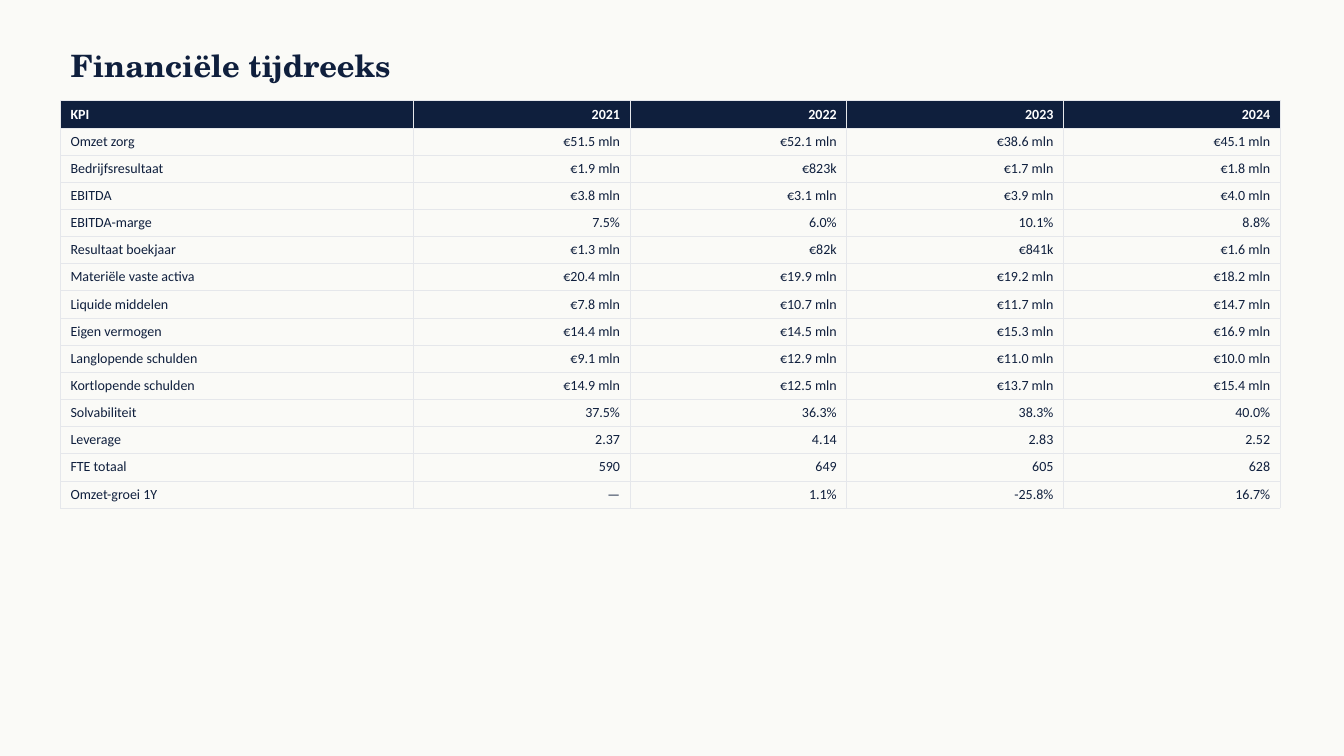
"""Build the slide with the financial time series table."""
from lxml import etree
from pptx import Presentation
from pptx.dml.color import RGBColor
from pptx.enum.text import MSO_ANCHOR, PP_ALIGN
from pptx.oxml.ns import qn
from pptx.util import Pt

LEFT, RIGHT = PP_ALIGN.LEFT, PP_ALIGN.RIGHT
MIDDLE = MSO_ANCHOR.MIDDLE
NAVY = RGBColor(0x0F, 0x1F, 0x3D)
WHITE = RGBColor(0xFF, 0xFF, 0xFF)
PAPER = RGBColor(0xFA, 0xFA, 0xF7)
RULE = RGBColor(0xE5, 0xE7, 0xEB)

TITLE = "Financiële tijdreeks"
ROWS = [
    ("KPI", "2021", "2022", "2023", "2024"),
    ("Omzet zorg", "€51.5 mln", "€52.1 mln", "€38.6 mln", "€45.1 mln"),
    ("Bedrijfsresultaat", "€1.9 mln", "€823k", "€1.7 mln", "€1.8 mln"),
    ("EBITDA", "€3.8 mln", "€3.1 mln", "€3.9 mln", "€4.0 mln"),
    ("EBITDA-marge", "7.5%", "6.0%", "10.1%", "8.8%"),
    ("Resultaat boekjaar", "€1.3 mln", "€82k", "€841k", "€1.6 mln"),
    ("Materiële vaste activa", "€20.4 mln", "€19.9 mln", "€19.2 mln", "€18.2 mln"),
    ("Liquide middelen", "€7.8 mln", "€10.7 mln", "€11.7 mln", "€14.7 mln"),
    ("Eigen vermogen", "€14.4 mln", "€14.5 mln", "€15.3 mln", "€16.9 mln"),
    ("Langlopende schulden", "€9.1 mln", "€12.9 mln", "€11.0 mln", "€10.0 mln"),
    ("Kortlopende schulden", "€14.9 mln", "€12.5 mln", "€13.7 mln", "€15.4 mln"),
    ("Solvabiliteit", "37.5%", "36.3%", "38.3%", "40.0%"),
    ("Leverage", "2.37", "4.14", "2.83", "2.52"),
    ("FTE totaal", "590", "649", "605", "628"),
    ("Omzet-groei 1Y", "—", "1.1%", "-25.8%", "16.7%"),
]
WIDTHS = [252] + [154.8] * 4
ROW_H = 19.4
MARGIN = 43.2


def set_font(para, name, size, color, bold):
    font = para.font
    font.name, font.size, font.bold = name, Pt(size), bold
    font.color.rgb = color


def add_border(cell):
    props = cell._tc.get_or_add_tcPr()
    for side in ("lnL", "lnR", "lnT", "lnB"):
        line = etree.SubElement(props, qn(f"a:{side}"), w=str(Pt(0.5)))
        fill = etree.SubElement(line, qn("a:solidFill"))
        etree.SubElement(fill, qn("a:srgbClr"), val=str(RULE))


def add_title(slide):
    title = slide.shapes.title
    title.left, title.top = Pt(MARGIN), Pt(28.8)
    title.width, title.height = Pt(864), Pt(36)
    frame = title.text_frame
    frame.text = TITLE
    frame.vertical_anchor = MIDDLE
    para = frame.paragraphs[0]
    para.alignment = LEFT
    set_font(para, "TeX Gyre Schola", 22, NAVY, True)


def add_grid(slide):
    table = slide.shapes.add_table(
        len(ROWS), len(WIDTHS), Pt(MARGIN), Pt(72),
        Pt(sum(WIDTHS)), Pt(ROW_H * len(ROWS))).table
    table.horz_banding = False
    for col, width in zip(table.columns, WIDTHS):
        col.width = Pt(width)
    for r, values in enumerate(ROWS):
        table.rows[r].height = Pt(ROW_H)
        head = r == 0
        for c, value in enumerate(values):
            cell = table.cell(r, c)
            cell.text = value
            add_border(cell)
            if head:
                cell.fill.solid()
                cell.fill.fore_color.rgb = NAVY
            else:
                cell.fill.background()
            para = cell.text_frame.paragraphs[0]
            para.alignment = RIGHT if c else LEFT
            set_font(para, "Calibri", 10, WHITE if head else NAVY, head)


def main():
    deck = Presentation()
    deck.slide_width, deck.slide_height = Pt(960), Pt(540)
    slide = deck.slides.add_slide(deck.slide_layouts[5])
    slide.background.fill.solid()
    slide.background.fill.fore_color.rgb = PAPER
    add_title(slide)
    add_grid(slide)
    deck.save("out.pptx")


if __name__ == "__main__":
    main()
